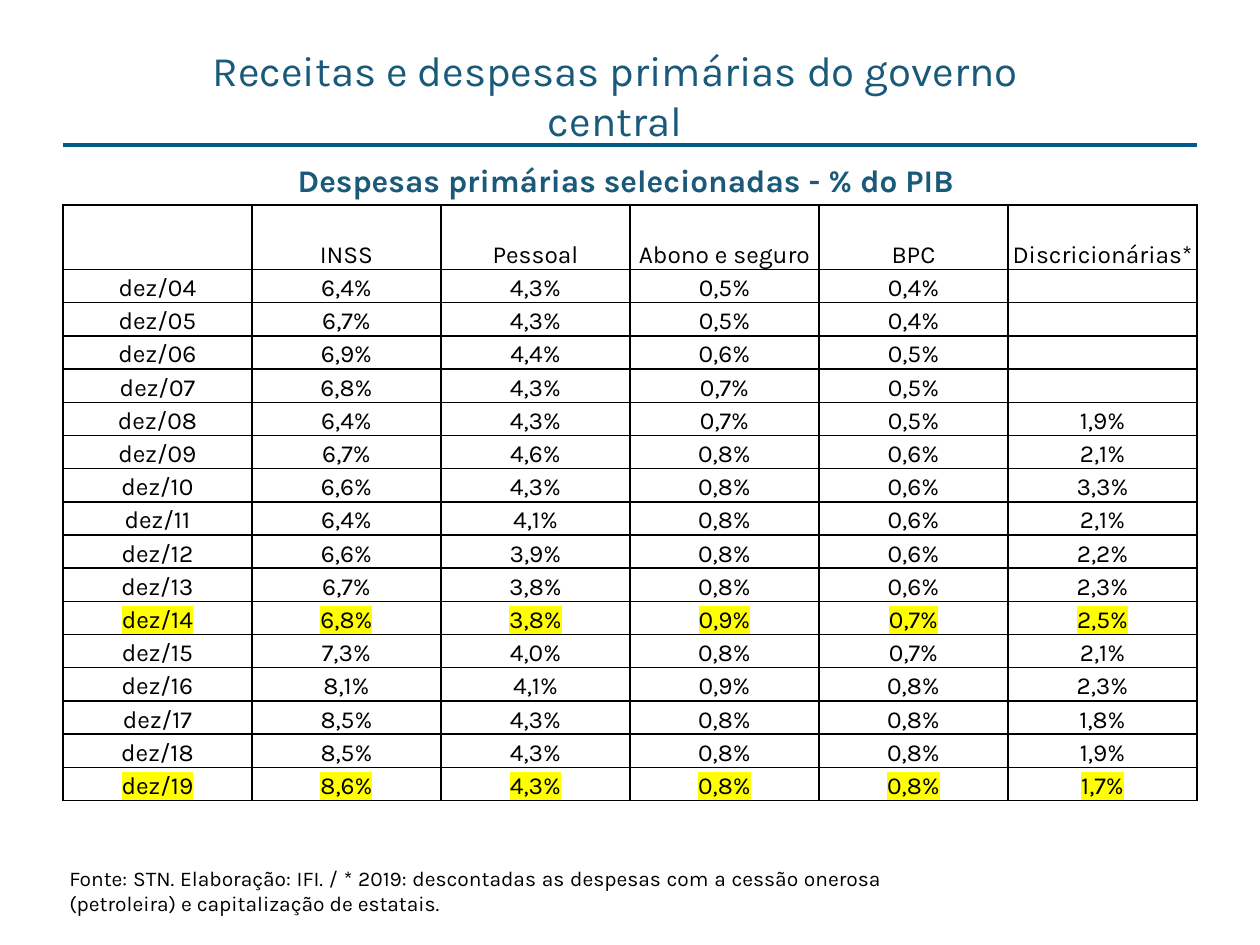
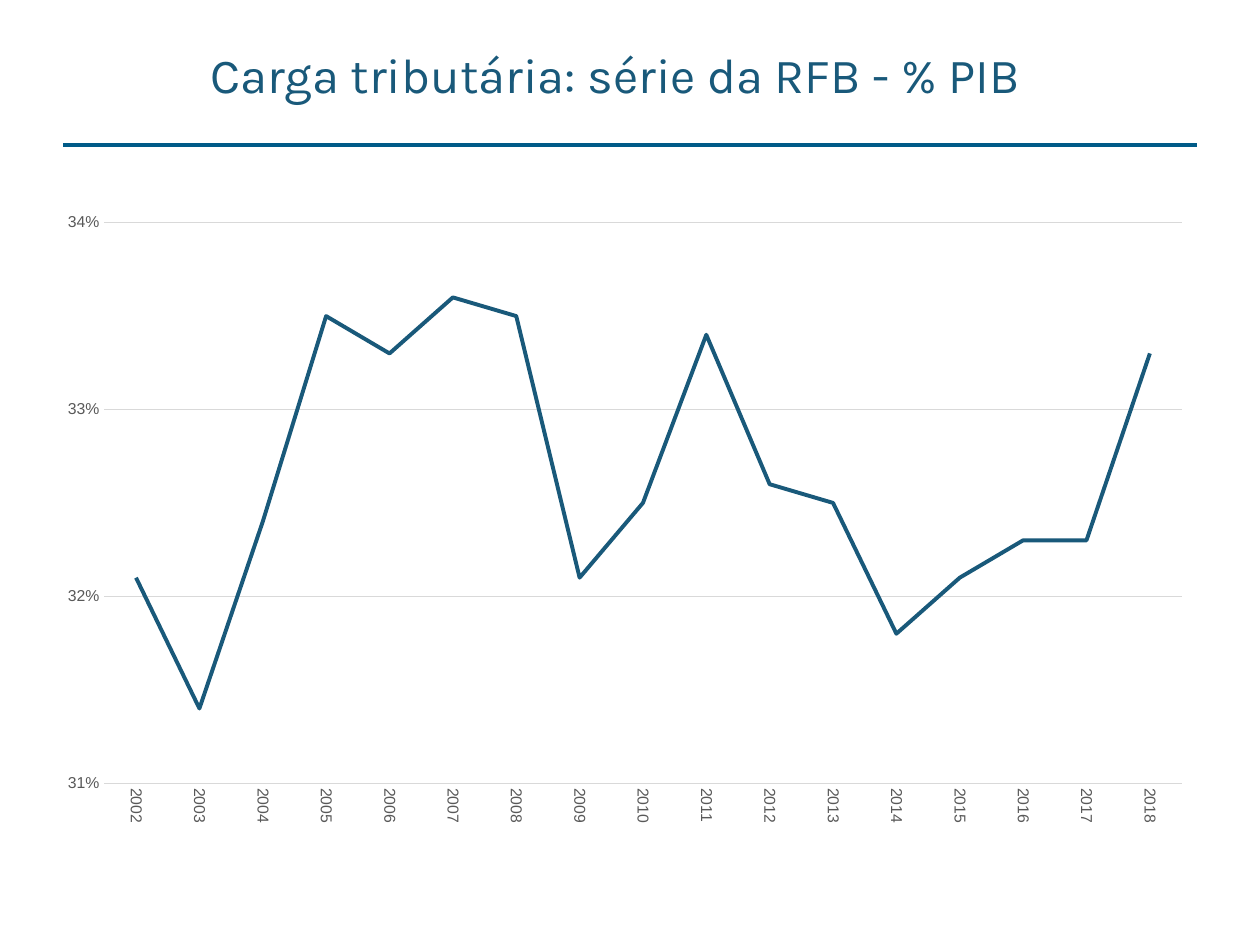
from lxml import etree
from pptx import Presentation
from pptx.chart.data import CategoryChartData
from pptx.dml.color import RGBColor
from pptx.enum import chart as charts, shapes, text
from pptx.oxml import parse_xml
from pptx.oxml.ns import nsdecls, qn
from pptx.util import Pt

BLUE, RULE, BLACK, WHITE = "19597A", "005B88", "000000", "FFFFFF"
GREY, GRID, YELLOW = "595959", "D9D9D9", "FFFF00"
LEFT, WIDTH = 36, 648
CENTER = text.PP_ALIGN.CENTER


def style_font(font, size, color, name="Karla", bold=False):
    font.size, font.name, font.bold = Pt(size), name, bold
    font.color.rgb = RGBColor.from_string(color)


def add_text(page, words, place, size, color=BLUE, bold=False,
             align=CENTER, anchor=text.MSO_ANCHOR.TOP):
    box = page.shapes.add_textbox(*[Pt(length) for length in place])
    frame = box.text_frame
    frame.word_wrap, frame.vertical_anchor = True, anchor
    frame.margin_left = frame.margin_right = Pt(3.6)
    frame.margin_top = frame.margin_bottom = Pt(3.6)
    para = frame.paragraphs[0]
    para.text, para.alignment = words, align
    style_font(para.font, size, color, bold=bold)


deck = Presentation()
deck.slide_width, deck.slide_height = Pt(720), Pt(540)

# Title and rule on every slide
pages = []
for title, size, height in [
    ("Receitas e despesas primárias do governo central", 24, 62),
    ("Carga tributária: série da RFB - % PIB", 28, 50),
]:
    page = deck.slides.add_slide(deck.slide_layouts[6])
    rule = page.shapes.add_connector(
        shapes.MSO_CONNECTOR.STRAIGHT, Pt(LEFT), Pt(82.8), Pt(LEFT + WIDTH), Pt(82.8))
    rule.line.width = Pt(2)
    rule.line.color.rgb = RGBColor.from_string(RULE)
    etree.SubElement(rule._element.spPr, qn("a:effectLst"))
    add_text(page, title, (76.5, 21.8, 550, height), size)
    pages.append(page)
spending_page, tax_page = pages

# Slide 1: selected primary spending
add_text(spending_page,
         "Fonte: STN. Elaboração: IFI. / * 2019: descontadas as despesas com a "
         "cessão onerosa (petroleira) e capitalização de estatais.",
         (LEFT, 491, 471.6, 39.6), 12, BLACK, align=text.PP_ALIGN.JUSTIFY)
add_text(spending_page, "Despesas primárias selecionadas - % do PIB",
         (33.7, 83.5, WIDTH, 38.2), 18, bold=True, anchor=text.MSO_ANCHOR.MIDDLE)

headings = ["", "INSS", "Pessoal", "Abono e seguro", "BPC", "Discricionárias*"]
spending = [
    ("dez/04", "6,4%", "4,3%", "0,5%", "0,4%", ""),
    ("dez/05", "6,7%", "4,3%", "0,5%", "0,4%", ""),
    ("dez/06", "6,9%", "4,4%", "0,6%", "0,5%", ""),
    ("dez/07", "6,8%", "4,3%", "0,7%", "0,5%", ""),
    ("dez/08", "6,4%", "4,3%", "0,7%", "0,5%", "1,9%"),
    ("dez/09", "6,7%", "4,6%", "0,8%", "0,6%", "2,1%"),
    ("dez/10", "6,6%", "4,3%", "0,8%", "0,6%", "3,3%"),
    ("dez/11", "6,4%", "4,1%", "0,8%", "0,6%", "2,1%"),
    ("dez/12", "6,6%", "3,9%", "0,8%", "0,6%", "2,2%"),
    ("dez/13", "6,7%", "3,8%", "0,8%", "0,6%", "2,3%"),
    ("dez/14", "6,8%", "3,8%", "0,9%", "0,7%", "2,5%"),
    ("dez/15", "7,3%", "4,0%", "0,8%", "0,7%", "2,1%"),
    ("dez/16", "8,1%", "4,1%", "0,9%", "0,8%", "2,3%"),
    ("dez/17", "8,5%", "4,3%", "0,8%", "0,8%", "1,8%"),
    ("dez/18", "8,5%", "4,3%", "0,8%", "0,8%", "1,9%"),
    ("dez/19", "8,6%", "4,3%", "0,8%", "0,8%", "1,7%"),
]
highlighted = {"dez/14", "dez/19"}
rows = [headings, *spending]
table = spending_page.shapes.add_table(
    len(rows), len(headings), Pt(LEFT), Pt(117), Pt(WIDTH), Pt(340.5)).table
table.first_row = table.horz_banding = False
for row_index, values in enumerate(rows):
    table.rows[row_index].height = Pt(18.97 if row_index else 37)
    for column_index, value in enumerate(values):
        cell = table.cell(row_index, column_index)
        cell.margin_left = cell.margin_right = cell.margin_top = Pt(0.7)
        cell.margin_bottom = 0
        cell.vertical_anchor = text.MSO_ANCHOR.BOTTOM
        para = cell.text_frame.paragraphs[0]
        para.alignment = CENTER
        style_font(para.font, 14, BLACK)
        if value:
            span = para.add_run()
            span.text = value
            if values[0] in highlighted:
                span._r.get_or_add_rPr().append(parse_xml(
                    f'<a:highlight {nsdecls("a")}><a:srgbClr val="{YELLOW}"/></a:highlight>'))
        else:
            etree.SubElement(para._p, qn("a:endParaRPr"), sz="1400")
        for side in ("lnL", "lnR", "lnT", "lnB"):
            cell._tc.get_or_add_tcPr().append(parse_xml(
                f'<a:{side} {nsdecls("a")} w="12700"><a:solidFill>'
                f'<a:srgbClr val="{BLACK}"/></a:solidFill></a:{side}>'))
        cell.fill.solid()
        cell.fill.fore_color.rgb = RGBColor.from_string(WHITE)

# Slide 2: tax burden by year
tax_data = CategoryChartData(number_format="0%")
tax_data.categories = [str(year) for year in range(2002, 2019)]
tax_data.add_series("Carga tributária", [
    0.321, 0.314, 0.324, 0.335, 0.333, 0.336, 0.335, 0.321, 0.325,
    0.334, 0.326, 0.325, 0.318, 0.321, 0.323, 0.323, 0.333])
chart = tax_page.shapes.add_chart(
    charts.XL_CHART_TYPE.LINE, Pt(36.3), Pt(122), Pt(WIDTH), Pt(352), tax_data).chart
chart.has_legend = chart.has_title = False
style_font(chart.font, 10, BLACK, "Arial")
plot = chart.plots[0]
plot.vary_by_categories = False
series = plot.series[0]
series.smooth = False
series.marker.style = charts.XL_MARKER_STYLE.NONE
series.format.line.width = Pt(2.25)
series.format.line.color.rgb = RGBColor.from_string(BLUE)

years, shares = chart.category_axis, chart.value_axis
for axis in (years, shares):
    axis.major_tick_mark = axis.minor_tick_mark = charts.XL_TICK_MARK.NONE
    style_font(axis.tick_labels.font, 9, GREY, "Arial")
shares.minimum_scale, shares.maximum_scale, shares.major_unit = 0.31, 0.34, 0.01
shares.tick_labels.number_format = "0%"
shares.tick_labels.number_format_is_linked = False
shares.format.line.fill.background()
for line in (years.format.line, shares.major_gridlines.format.line):
    line.width = Pt(0.75)
    line.color.rgb = RGBColor.from_string(GRID)
years._element.find(qn("c:txPr")).find(qn("a:bodyPr")).set("rot", "5400000")

plot_area = chart._chartSpace.chart.plotArea
for old_layout in plot_area.findall(qn("c:layout")):
    plot_area.remove(old_layout)
plot_area.insert(0, parse_xml(
    f'<c:layout {nsdecls("c")}><c:manualLayout><c:layoutTarget val="inner"/>'
    '<c:xMode val="edge"/><c:yMode val="edge"/><c:x val="0.036"/><c:y val="0.014"/>'
    '<c:w val="0.95"/><c:h val="0.911"/></c:manualLayout></c:layout>'))

deck.save("out.pptx")
